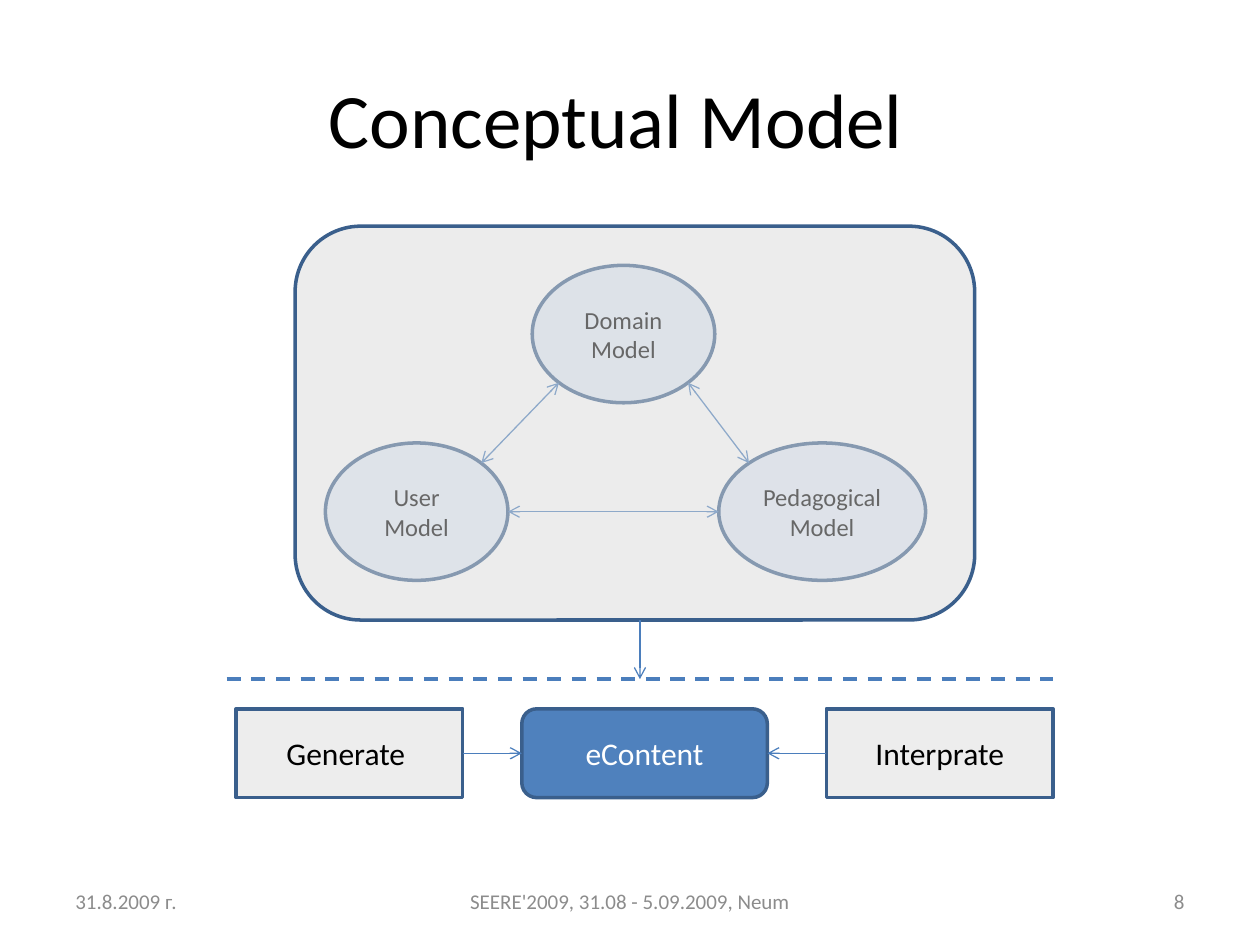
from math import sqrt

from lxml import etree
from pptx import Presentation
from pptx.dml.color import RGBColor
from pptx.enum.dml import MSO_LINE
from pptx.enum.shapes import MSO_CONNECTOR, MSO_SHAPE
from pptx.enum.text import MSO_ANCHOR, PP_ALIGN
from pptx.oxml.ns import qn
from pptx.util import Cm, Pt

BLACK = RGBColor(0x00, 0x00, 0x00)
WHITE = RGBColor(0xFF, 0xFF, 0xFF)
FOOTER_GRAY = RGBColor(0x8C, 0x8C, 0x8C)
PANEL_GRAY = RGBColor(0xD9, 0xD9, 0xD9)
PALE_BLUE = RGBColor(0xC6, 0xD9, 0xF1)
BLUE = RGBColor(0x4F, 0x81, 0xBD)
OUTLINE_BLUE = RGBColor(0x3A, 0x5F, 0x8C)
ARROW_BLUE = RGBColor(0x4B, 0x7E, 0xBC)

RECTANGLE = MSO_SHAPE.RECTANGLE
ROUNDED = MSO_SHAPE.ROUNDED_RECTANGLE
OVAL = MSO_SHAPE.OVAL
STRAIGHT = MSO_CONNECTOR.STRAIGHT
DASH = MSO_LINE.DASH
MIDDLE = MSO_ANCHOR.MIDDLE
LEFT, CENTER, RIGHT = PP_ALIGN.LEFT, PP_ALIGN.CENTER, PP_ALIGN.RIGHT

FONT = "Calibri"
SIDE_LEFT, SIDE_RIGHT = 1, 3


def write(shape, lines, size, color, align=CENTER):
    frame = shape.text_frame
    frame.word_wrap = True
    frame.vertical_anchor = MIDDLE
    for index, line in enumerate(lines):
        para = frame.add_paragraph() if index else frame.paragraphs[0]
        para.alignment = align
        span = para.add_run()
        span.text = line
        span.font.name = FONT
        span.font.size = Pt(size)
        span.font.color.rgb = color


def add_label(page, box, text, size, color, align=CENTER):
    label = page.shapes.add_textbox(*map(Cm, box))
    write(label, [text], size, color, align)


def add_block(page, kind, box, fill, opacity=100):
    """Add an outlined shape whose fill has the given opacity in percent."""
    block = page.shapes.add_shape(kind, *map(Cm, box))
    block.shadow.inherit = False
    block.fill.solid()
    block.fill.fore_color.rgb = fill
    block.line.color.rgb = OUTLINE_BLUE
    block.line.width = Pt(2)
    if opacity < 100:
        color = block.fill._xPr.find(qn("a:solidFill"))[0]
        etree.SubElement(color, qn("a:alpha"), val=str(opacity * 1000))
    return block


def add_line(page, start, end, width=0.75, arrows=("tailEnd",)):
    """Add a line; arrows names its arrowed ends, headEnd before tailEnd."""
    line = page.shapes.add_connector(STRAIGHT, *map(Cm, (*start, *end)))
    line.line.color.rgb = ARROW_BLUE
    line.line.width = Pt(width)
    outline = line.line._get_or_add_ln()
    for name in arrows:
        etree.SubElement(outline, qn(f"a:{name}"), type="arrow")
    etree.SubElement(line._element.spPr, qn("a:effectLst"))
    return line


def oval_point(box, across, down):
    """Point of an oval at its side (down 0) or at a 45 degree diagonal."""
    left, top, width, height = box
    reach = 1 / sqrt(2) if down else 1
    return (left + width / 2 * (1 + across * reach),
            top + height / 2 * (1 + down * reach))


def add_models(page, box):
    """Draw the three linked models under a translucent panel."""
    left, top, width, height = box
    user = (left + 0.61, top + 4.37, 3.68, 2.77)
    domain = (left + 4.78, top + 0.79, 3.68, 2.77)
    pedagogical = (left + 8.54, top + 4.37, 4.17, 2.77)
    for name, place, opacity in (("User", user, 46),
                                 ("Domain", domain, 51),
                                 ("Pedagogical", pedagogical, 49)):
        oval = add_block(page, OVAL, place, PALE_BLUE, opacity)
        write(oval, [name, "Model"], 14, BLACK)

    links = (
        (oval_point(user, 1, -1), oval_point(domain, -1, 1)),
        (oval_point(domain, 1, 1), oval_point(pedagogical, -1, -1)),
        (oval_point(user, 1, 0), oval_point(pedagogical, -1, 0)),
    )
    for start, end in links:
        add_line(page, start, end, arrows=("headEnd", "tailEnd"))
    add_block(page, ROUNDED, box, PANEL_GRAY, 48)


def add_content_row(page, box):
    """Draw the content block with a process pointing at it from each side."""
    left, top, width, height = box
    side_width, gap = 4.57, 1.19
    middle = top + height / 2
    content_left = left + side_width + gap
    content_width = width - 2 * (side_width + gap)
    content = add_block(page, ROUNDED,
                        (content_left, top, content_width, height), BLUE)
    write(content, ["eContent"], 18, WHITE)

    right_left = left + width - side_width
    sides = (
        ("Generate ", left, left + side_width, content_left,
         SIDE_RIGHT, SIDE_LEFT),
        ("Interprate", right_left, right_left, content_left + content_width,
         SIDE_LEFT, SIDE_RIGHT),
    )
    for name, side_left, start, end, start_side, end_side in sides:
        process = add_block(page, RECTANGLE,
                            (side_left, top, side_width, height),
                            PANEL_GRAY, 46)
        write(process, [name], 18, BLACK)
        arrow = add_line(page, (start, middle), (end, middle))
        arrow.begin_connect(process, start_side)
        arrow.end_connect(content, end_side)


def add_divider(page, box):
    """Draw the arrow coming down onto the dashed line at the box's bottom."""
    left, top, width, height = box
    bottom = top + height
    divider = add_line(page, (left, bottom), (left + width, bottom), 2, ())
    divider.line.dash_style = DASH
    center = left + width / 2
    add_line(page, (center, top), (center, bottom))


def add_footer(page, box):
    left, top, width, height = box
    side, center = 5.93, 8.04
    add_label(page, (left, top, side, height),
              "31.8.2009 г.", 12, FOOTER_GRAY, LEFT)
    add_label(page, (left + (width - center) / 2, top, center, height),
              "SEERE'2009, 31.08 - 5.09.2009, Neum", 12, FOOTER_GRAY)
    add_label(page, (left + width - side, top, side, height),
              "8", 12, FOOTER_GRAY, RIGHT)


def main():
    deck = Presentation()
    deck.slide_width, deck.slide_height = Cm(25.4), Cm(19.05)
    page = deck.slides.add_slide(deck.slide_layouts[6])
    add_label(page, (0.99, 0.79, 22.86, 3.18), "Conceptual Model", 44, BLACK)
    add_footer(page, (1.27, 17.66, 22.86, 1.01))
    add_content_row(page, (4.76, 14.29, 16.47, 1.79))
    add_models(page, (5.95, 4.56, 13.7, 7.94))
    add_divider(page, (4.57, 12.5, 16.66, 1.19))
    deck.save("out.pptx")


if __name__ == "__main__":
    main()
